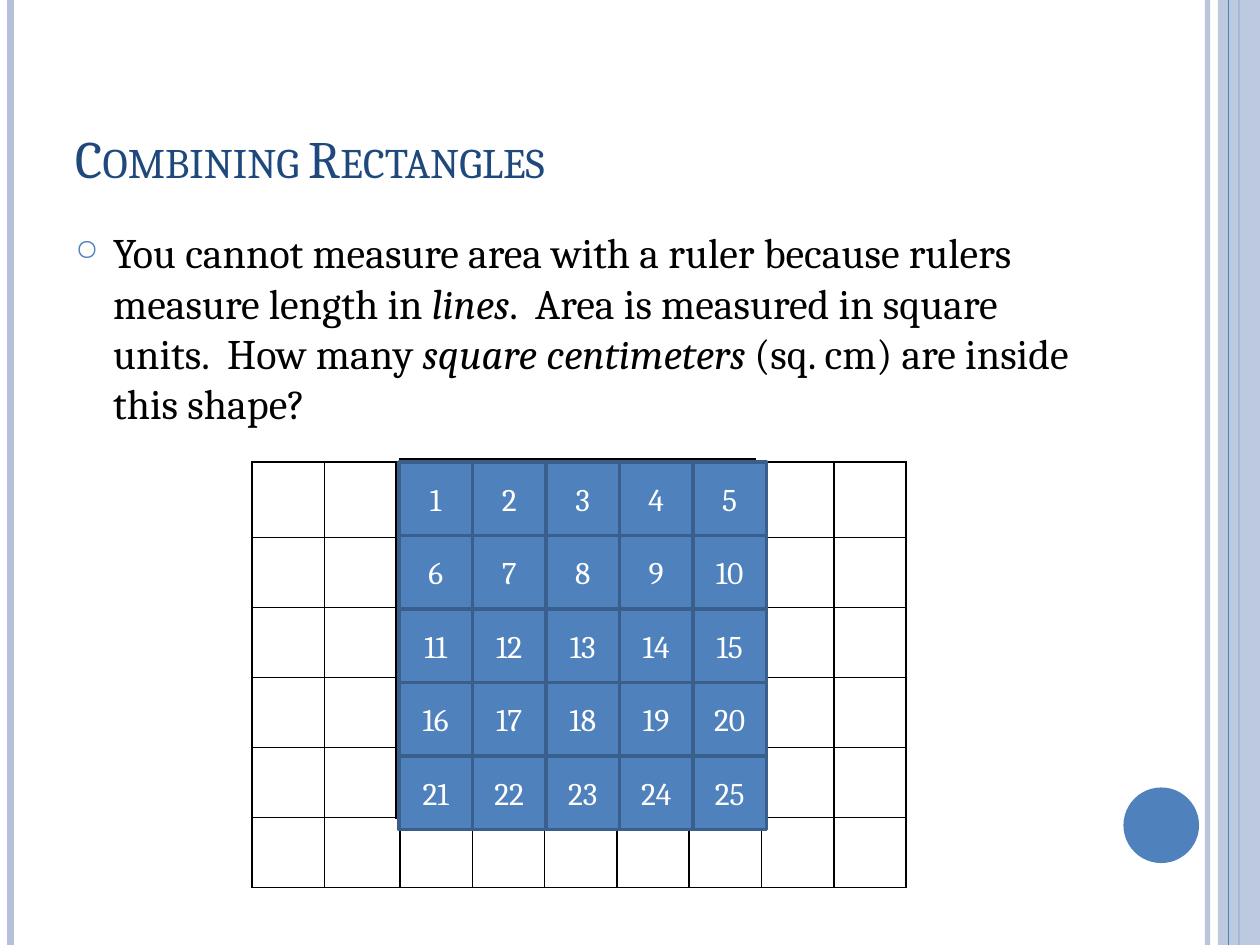
import pptx
import pptx.dml.color
import pptx.enum.shapes
import pptx.enum.text
import pptx.oxml
import pptx.oxml.ns
import pptx.util
from lxml import etree

NS = 'xmlns:a="http://schemas.openxmlformats.org/drawingml/2006/main"'
BLUE, PALE, BLACK = "4F81BD", "B3C1DB", "000000"
Pt = pptx.util.Pt
RECTANGLE = pptx.enum.shapes.MSO_SHAPE.RECTANGLE


def paint(color_format, hex_color, alpha=100):
    """Set a colour and, below 100, its opacity in percent."""
    color_format.rgb = pptx.dml.color.RGBColor.from_string(hex_color)
    if alpha < 100:
        for color in color_format._xFill.iter(pptx.oxml.ns.qn("a:srgbClr")):
            etree.SubElement(color, pptx.oxml.ns.qn("a:alpha")).set("val", str(alpha * 1000))


def draw_line(x1, y1, x2, y2, hex_color, weight, alpha=100):
    line = slide.shapes.add_connector(
        pptx.enum.shapes.MSO_CONNECTOR.STRAIGHT, *[round(n * unit) for n in (x1, y1, x2, y2)])
    line.line.width = Pt(weight)
    line.line.fill.solid()
    paint(line.line.fill.fore_color, hex_color, alpha)
    etree.SubElement(line._element.spPr, pptx.oxml.ns.qn("a:effectLst"))


deck = pptx.Presentation()
deck.slide_width = pptx.util.Inches(10)
deck.slide_height = pptx.util.Inches(7.5)
slide = deck.slides.add_slide(deck.slide_layouts[6])

# The slide is a grid of 120 columns by 90 rows
unit = deck.slide_width / 120
columns, rows = 120, 90

# Side stripes, the pale band and the disc
for x, color, weight, alpha in [(115, PALE, 3, 93), (1, PALE, 4.5, 100), (118, BLUE, 1.5, 100)]:
    draw_line(x, 0, x, rows, color, weight, alpha)
for kind, place, color, alpha in [
    (RECTANGLE, (116, 0, 4, rows), PALE, 87),
    (pptx.enum.shapes.MSO_SHAPE.OVAL, (107, 75, 7.2, 7.2), BLUE, 100),
]:
    ornament = slide.shapes.add_shape(kind, *[round(n * unit) for n in place])
    ornament.shadow.inherit = False
    ornament.fill.solid()
    paint(ornament.fill.fore_color, color, alpha)
    ornament.line.fill.background()
    if kind == RECTANGLE:
        draw_line(117, 0, 117, rows, BLUE, 0.75)

# Title and question
passages = [
    ((6, 3.6, 98, 15), pptx.enum.text.MSO_ANCHOR.BOTTOM, 30, "1F497D",
     [("Combining Rectangles", False)]),
    ((6, 21, 98, 64), pptx.enum.text.MSO_ANCHOR.TOP, 24, BLACK, [
        ("You cannot measure area with a ruler because rulers measure length in ", False),
        ("lines", True),
        (".  Area is measured in square units.  How many ", False),
        ("square centimeters ", True),
        ("(sq. cm) are inside this shape?", False),
    ]),
]
for place, anchor, size, color, phrases in passages:
    frame = slide.shapes.add_textbox(*[round(n * unit) for n in place]).text_frame
    frame.word_wrap = True
    frame.vertical_anchor = anchor
    paragraph = frame.paragraphs[0]
    for words, italic in phrases:
        run = paragraph.add_run()
        run.text = words
        for key, value in {"name": "Cambria", "size": Pt(size), "italic": italic}.items():
            setattr(run.font, key, value)
        paint(run.font.color, color)
        if size == 30:
            run._r.get_or_add_rPr().set("cap", "small")

# The last paragraph is the bulleted question
paragraph.space_before = Pt(6)
bullet = paragraph._p.get_or_add_pPr()
bullet.set("marL", str(round(3.6 * unit)))
bullet.set("indent", str(round(-3.6 * unit)))
for xml in [f'<a:buClr {NS}><a:srgbClr val="{BLUE}"/></a:buClr>',
            f'<a:buSzPct {NS} val="70000"/>', f'<a:buChar {NS} char="○"/>']:
    bullet.append(pptx.oxml.parse_xml(xml))

# Empty centimeter grid
grid_columns = [6.89] * 9
grid_columns[1] = 7.2
grid_rows = [7.2] + [6.67] * 5
grid = slide.shapes.add_table(
    len(grid_rows), len(grid_columns),
    *[round(n * unit) for n in (24, 44, sum(grid_columns), sum(grid_rows))]).table
grid.first_row = grid.horz_banding = False
for column, width in zip(grid.columns, grid_columns):
    column.width = round(width * unit)
for row, height in zip(grid.rows, grid_rows):
    row.height = round(height * unit)
for cell in grid.iter_cells():
    cell.fill.background()
    for position, side in enumerate(["lnL", "lnR", "lnT", "lnB"]):
        cell._tc.get_or_add_tcPr().insert(position, pptx.oxml.parse_xml(
            f'<a:{side} {NS} w="12700"><a:solidFill><a:srgbClr val="{BLACK}"/></a:solidFill></a:{side}>'))

# Outline of the measured shape
left, top, right, bottom = 38, 44, 72, 78
for ends in [(left, top, left, bottom), (left, top, right, top),
             (right, bottom, right, top), (left, bottom, right, bottom)]:
    draw_line(*ends, BLACK, 5)

# Numbered unit squares, five to a row
side = 7
for index in range(25):
    row, column = divmod(index, 5)
    square = slide.shapes.add_shape(RECTANGLE, *[
        round(n * unit) for n in (left + column * side, top + row * side, side, side)])
    square.shadow.inherit = False
    square.fill.solid()
    paint(square.fill.fore_color, BLUE)
    square.line.width = Pt(2)
    paint(square.line.color, "3A5F8C")
    frame = square.text_frame
    frame.vertical_anchor = pptx.enum.text.MSO_ANCHOR.MIDDLE
    number = frame.paragraphs[0]
    number.alignment = pptx.enum.text.PP_ALIGN.CENTER
    run = number.add_run()
    run.text = str(index + 1)
    for key, value in {"name": "Cambria", "size": Pt(18)}.items():
        setattr(run.font, key, value)
    paint(run.font.color, "FFFFFF")

deck.save("out.pptx")
